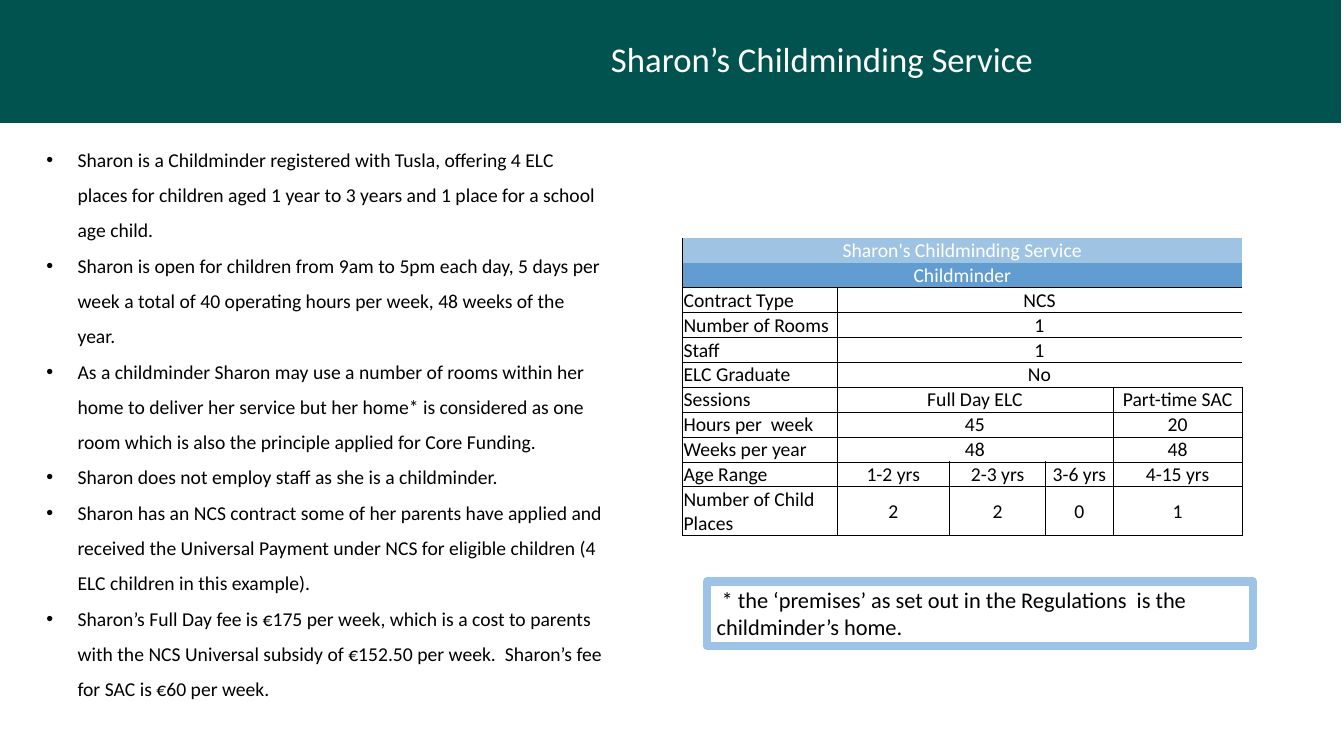
from lxml import etree
from pptx import Presentation, util as u
from pptx.dml.color import RGBColor
from pptx.enum import shapes, text
from pptx.oxml import ns

COLOURS = {
    "green": "00534F", "white": "FFFFFF", "black": "000000",
    "service": "9FC4E3", "childminder": "629DD1", "note": "9DC3E6",
}
FONT = "Calibri"


def set_font(para, size, colour):
    para.font.name = FONT
    para.font.size = u.Pt(size)
    para.font.color.rgb = RGBColor.from_string(COLOURS[colour])


def set_border(cell, side, visible):
    line = etree.SubElement(cell._tc.get_or_add_tcPr(), ns.qn(f"a:ln{side}"))
    if visible:
        line.set("w", str(u.Pt(0.5)))
        fill = etree.SubElement(line, ns.qn("a:solidFill"))
        etree.SubElement(fill, ns.qn("a:srgbClr"), val=COLOURS["black"])
    else:
        etree.SubElement(line, ns.qn("a:noFill"))


deck = Presentation()
deck.slide_width, deck.slide_height = u.Inches(13.33), u.Inches(7.5)
page = deck.slides.add_slide(deck.slide_layouts[1])

# Title band
band = page.shapes.add_shape(shapes.MSO_SHAPE.RECTANGLE, 0, 0, u.Inches(3.04), u.Inches(1.22))
band.shadow.inherit = False
band.line.fill.background()

title = page.shapes.title
title.left, title.top = u.Inches(3.01), 0
title.width, title.height = u.Inches(10.29), u.Inches(1.22)
for panel in (band, title):
    panel.fill.solid()
    panel.fill.fore_color.rgb = RGBColor.from_string(COLOURS["green"])
title.text_frame.text = "Sharon’s Childminding Service"
title.text_frame.auto_size = text.MSO_AUTO_SIZE.NONE
title.text_frame.vertical_anchor = text.MSO_ANCHOR.MIDDLE
para = title.text_frame.paragraphs[0]
para.alignment = text.PP_ALIGN.CENTER
para.line_spacing = 0.9
set_font(para, 24.8, "white")

# Bulleted description
points = [
    "Sharon is a Childminder registered with Tusla, offering 4 ELC places for children aged "
    "1 year to 3 years and 1 place for a school age child.",
    "Sharon is open for children from 9am to 5pm each day, 5 days per week a total of "
    "40 operating hours per week, 48 weeks of the year.",
    "As a childminder Sharon may use a number of rooms within her home to deliver her service "
    "but her home* is considered as one room which is also the principle applied for Core Funding.",
    "Sharon does not employ staff as she is a childminder.",
    "Sharon has an NCS contract some of her parents have applied and received the Universal "
    "Payment under NCS for eligible children (4 ELC children in this example).",
    "Sharon’s Full Day fee is €175 per week, which is a cost to parents with the NCS Universal "
    "subsidy of €152.50 per week.  Sharon’s fee for SAC is €60 per week.",
]
body = page.placeholders[1]
body.left, body.top = u.Inches(0.36), u.Inches(1.3)
body.width, body.height = u.Inches(5.76), u.Inches(5.4)
frame = body.text_frame
frame.text = "\n".join(points)
frame.auto_size = text.MSO_AUTO_SIZE.NONE
for para in frame.paragraphs:
    props = para._p.get_or_add_pPr()
    props.set("marL", str(u.Inches(0.31)))
    props.set("indent", str(u.Inches(-0.31)))
    etree.SubElement(props, ns.qn("a:buFont"), typeface="Arial")
    etree.SubElement(props, ns.qn("a:buChar"), char="•")
    para.line_spacing = 1.5
    para.space_before = u.Pt(0)
    set_font(para, 14, "black")

# Service table: each row lists (wording, columns covered)
rows = [
    [("Sharon's Childminding Service", 5)],
    [("Childminder", 5)],
    [("Contract Type", 1), ("NCS", 4)],
    [("Number of Rooms", 1), ("1", 4)],
    [("Staff", 1), ("1", 4)],
    [("ELC Graduate", 1), ("No", 4)],
    [("Sessions", 1), ("Full Day ELC", 3), ("Part-time SAC", 1)],
    [("Hours per  week", 1), ("45", 3), ("20", 1)],
    [("Weeks per year", 1), ("48", 3), ("48", 1)],
    [("Age Range", 1), ("1-2 yrs", 1), ("2-3 yrs", 1), ("3-6 yrs", 1), ("4-15 yrs", 1)],
    [("Number of Child Places", 1), ("2", 1), ("2", 1), ("0", 1), ("1", 1)],
]
header_fills = ["service", "childminder"]
column_widths = [1.53, 1.12, 0.95, 0.67, 1.28]
table = page.shapes.add_table(len(rows), len(column_widths), u.Inches(6.77), u.Inches(2.36),
                              u.Inches(5.55), u.Inches(2.88)).table
table.first_row = table.horz_banding = False
for column, width in zip(table.columns, column_widths):
    column.width = u.Inches(width)

for r, entries in enumerate(rows):
    table.rows[r].height = u.Inches(0.48 if r == len(rows) - 1 else 0.24)
    is_header = r < len(header_fills)
    start = 0
    for wording, span in entries:
        end = start + span - 1
        cell = table.cell(r, start)
        if span > 1:
            cell.merge(table.cell(r, end))
        is_label = start == 0 and not is_header
        cell.text = wording
        cell.margin_left = cell.margin_right = cell.margin_top = u.Inches(0.01)
        cell.margin_bottom = 0
        cell.vertical_anchor = text.MSO_ANCHOR.BOTTOM if is_label else text.MSO_ANCHOR.MIDDLE
        para = cell.text_frame.paragraphs[0]
        para.alignment = text.PP_ALIGN.LEFT if is_label else text.PP_ALIGN.CENTER
        set_font(para, 14, "white" if is_header else "black")
        for c in range(start, end + 1):
            part = table.cell(r, c)
            set_border(part, "L", c == start)
            set_border(part, "R", c == end and not is_header)
            set_border(part, "T", not is_header)
            set_border(part, "B", r >= len(header_fills) - 1)
            if is_header:
                part.fill.solid()
                part.fill.fore_color.rgb = RGBColor.from_string(COLOURS[header_fills[r]])
            else:
                part.fill.background()
        start = end + 1

# Footnote box
note = page.shapes.add_shape(shapes.MSO_SHAPE.RECTANGLE, u.Inches(7.01), u.Inches(5.77),
                             u.Inches(5.42), u.Inches(0.64))
note.shadow.inherit = False
note.fill.background()
note.line.color.rgb = RGBColor.from_string(COLOURS["note"])
note.line.width = u.Pt(6)
frame = note.text_frame
frame.word_wrap = True
frame.vertical_anchor = text.MSO_ANCHOR.TOP
frame.text = " * the ‘premises’ as set out in the Regulations  is the childminder’s home."
para = frame.paragraphs[0]
para.alignment = text.PP_ALIGN.LEFT
set_font(para, 16, "black")

deck.save("out.pptx")
